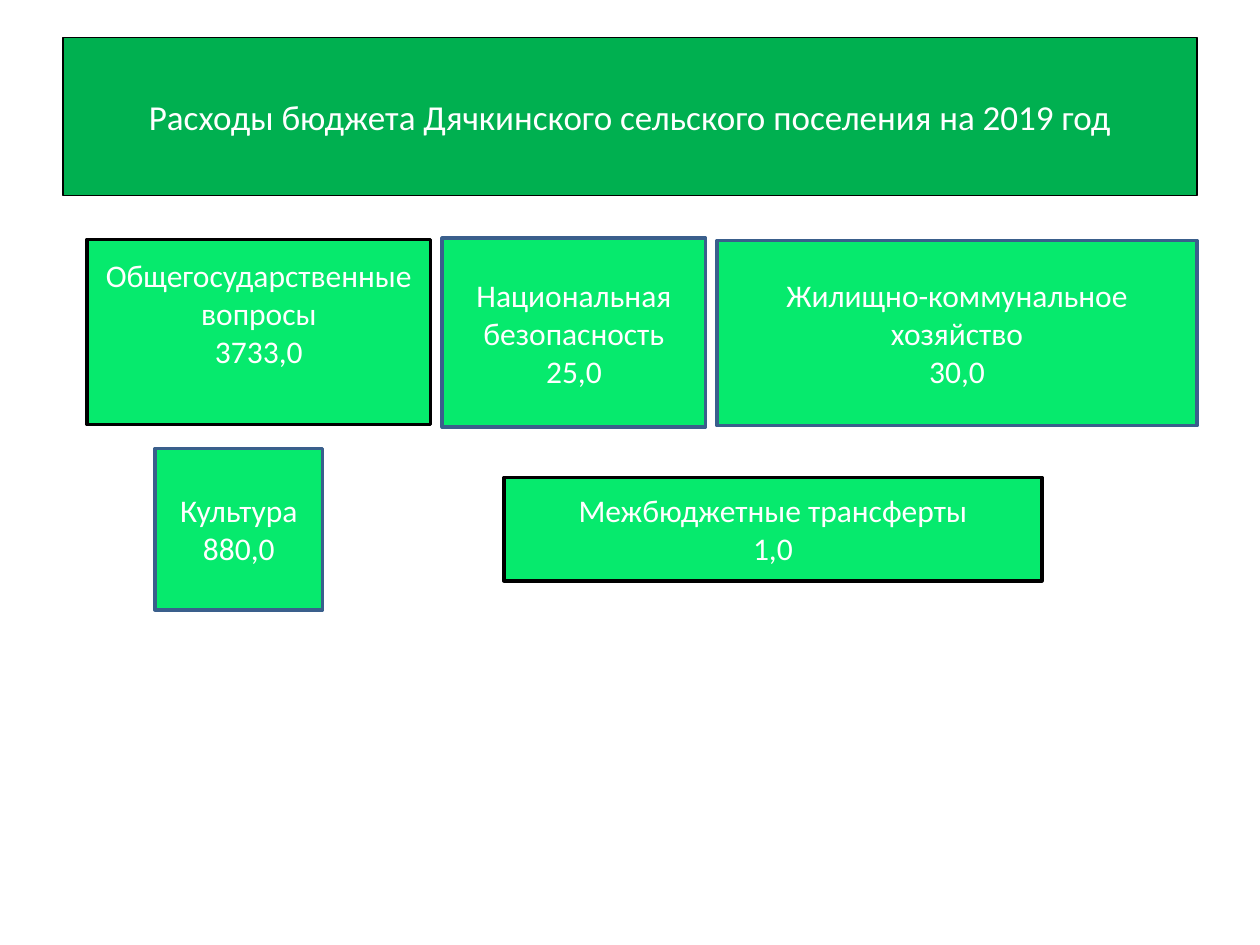
from pptx import Presentation
from pptx.dml.color import RGBColor
from pptx.enum.shapes import MSO_SHAPE
from pptx.enum.text import MSO_ANCHOR, PP_ALIGN
from pptx.util import Pt

RECT = MSO_SHAPE.RECTANGLE
MIDDLE = MSO_ANCHOR.MIDDLE
CENTER = PP_ALIGN.CENTER

COLORS = {
    "title": "00B050",
    "box": "06EA6D",
    "text": "FFFFFF",
    "black": "000000",
    "blue": "3A5F8C",
}

# name, amount, edge colour, (left, top, width, height), bottom inset
ITEMS = [
    ("Общегосударственные вопросы", "3733,0", "black",
     (49.7, 136.8, 196.5, 105.8), 25.6),
    ("Национальная безопасность", "25,0", "blue",
     (252.7, 136.1, 150.5, 108), 3.6),
    ("Жилищно-коммунальное хозяйство", "30,0", "blue",
     (409.7, 137.5, 274.3, 105.8), 3.6),
    ("Культура", "880,0", "blue", (88.6, 256.3, 95.8, 92.2), 3.6),
    ("Межбюджетные трансферты", "1,0", "black",
     (288, 272.9, 307.4, 59), 3.6),
]


class Painter:
    def __init__(self, slide, font="Calibri"):
        self.slide = slide
        self.font = font

    def color(self, name):
        return RGBColor.from_string(COLORS[name])

    def paint(self, shape, fill, edge, weight):
        shape.fill.solid()
        shape.fill.fore_color.rgb = self.color(fill)
        shape.line.color.rgb = self.color(edge)
        shape.line.width = Pt(weight)

    def label(self, shape, lines, size):
        """Put each line in its own centred paragraph."""
        frame = shape.text_frame
        frame.word_wrap = True
        frame.vertical_anchor = MIDDLE
        for i, line in enumerate(lines):
            para = frame.add_paragraph() if i else frame.paragraphs[0]
            para.alignment = CENTER
            run = para.add_run()
            run.text = line
            run.font.name = self.font
            run.font.size = Pt(size)
            run.font.color.rgb = self.color("text")

    def title(self, text, area):
        shape = self.slide.shapes.title
        shape.left, shape.top, shape.width, shape.height = map(Pt, area)
        self.paint(shape, "title", "black", 0.75)
        self.label(shape, [text], 20)

    def box(self, lines, edge, area, inset):
        shape = self.slide.shapes.add_shape(RECT, *map(Pt, area))
        shape.shadow.inherit = False
        shape.text_frame.margin_bottom = Pt(inset)
        self.paint(shape, "box", edge, 2)
        self.label(shape, lines, 18)


def main():
    deck = Presentation()
    deck.slide_width, deck.slide_height = Pt(720), Pt(540)
    painter = Painter(deck.slides.add_slide(deck.slide_layouts[5]))
    painter.title("Расходы бюджета Дячкинского сельского поселения на 2019 год",
                  (36, 21.6, 648, 90))
    for name, amount, edge, area, inset in ITEMS:
        painter.box([name, amount], edge, area, inset)
    deck.save("out.pptx")


if __name__ == "__main__":
    main()
